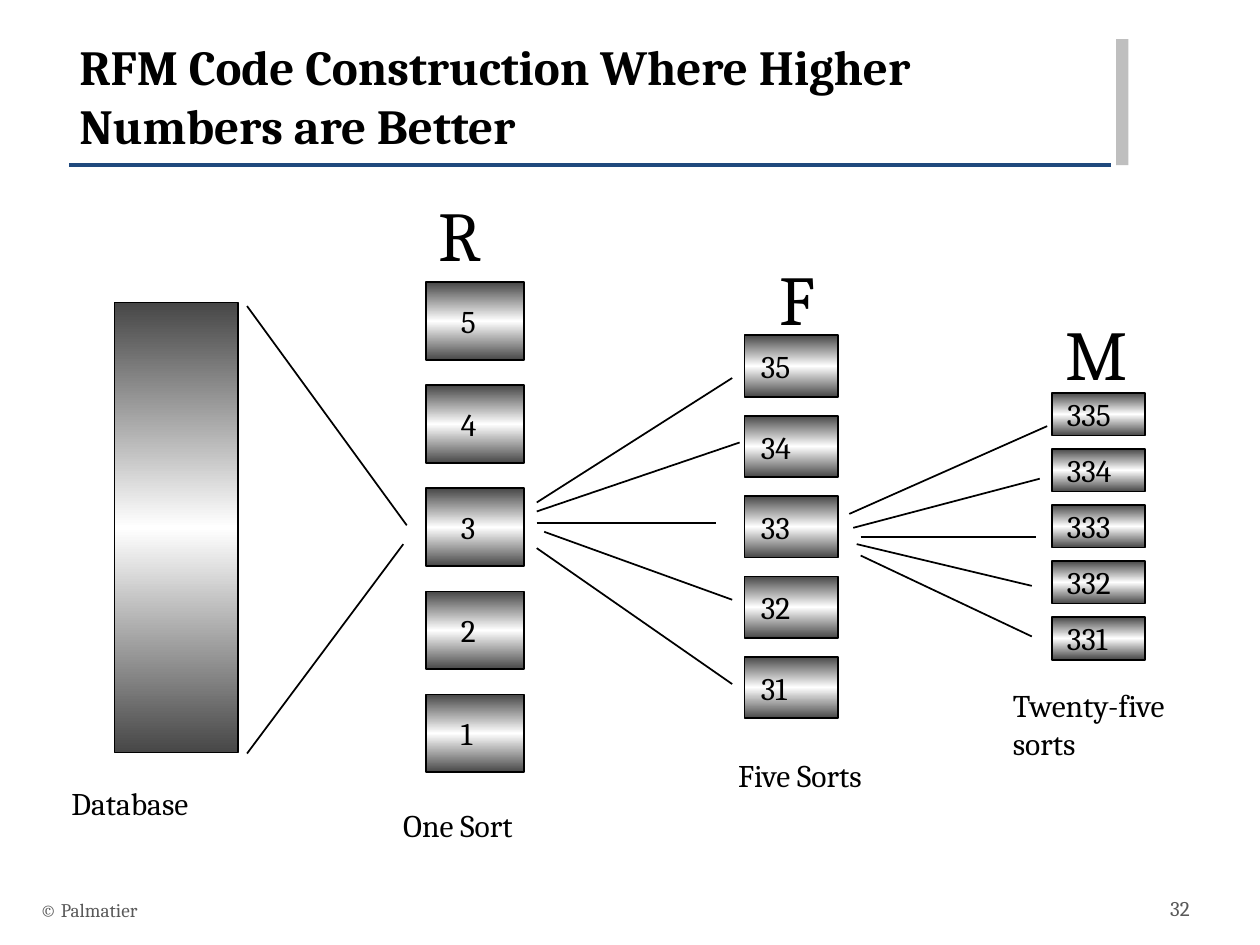
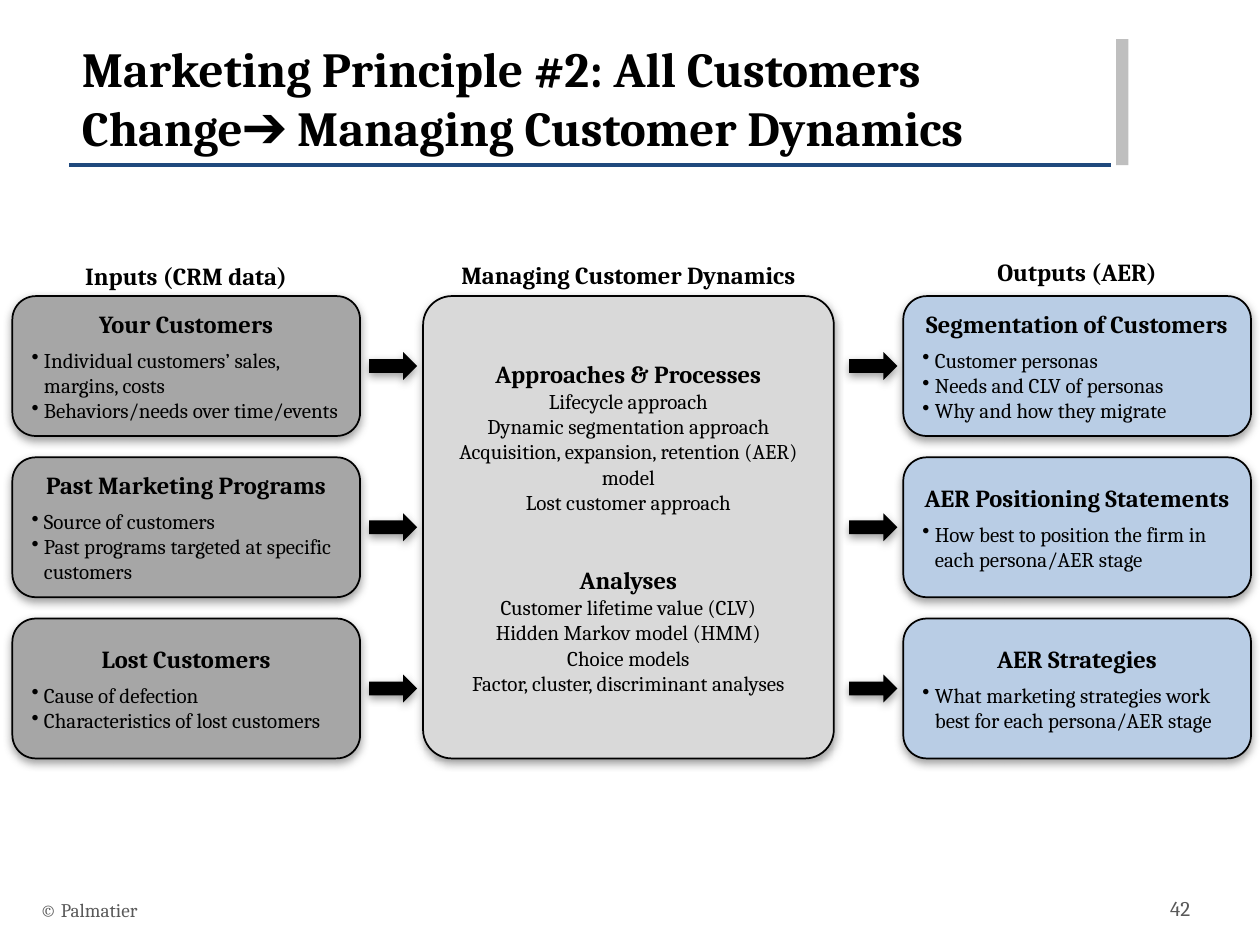
from copy import deepcopy
from dataclasses import dataclass
from typing import NamedTuple

from pptx import Presentation
from pptx.dml.color import RGBColor as Rgb
from pptx.enum.shapes import MSO_CONNECTOR as Connector, MSO_SHAPE as Preset
from pptx.enum.text import MSO_ANCHOR as Anchor, PP_ALIGN as Align
from pptx.oxml import parse_xml
from pptx.oxml.ns import nsdecls, qn
from pptx.util import Cm, Pt


class Theme:
    font = "Cambria"
    ink = Rgb.from_string("000000")
    muted = Rgb.from_string("595959")
    rule = Rgb.from_string("1F497D")
    band = Rgb.from_string("BFBFBF")
    steel = Rgb.from_string("474747")
    shine = Rgb.from_string("FFFFFF")
    inputs = Rgb.from_string("A6A6A6")
    process = Rgb.from_string("D9D9D9")
    outputs = Rgb.from_string("B9CDE5")
    title, letter, label, heading, body, footer = 28, 40, 18, 14, 12, 11


class Box(NamedTuple):
    """A rectangle in centimetres."""
    left: float
    top: float
    width: float
    height: float

    def lengths(self):
        return [Cm(value) for value in self]


@dataclass
class Line:
    text: str
    size: int
    bold: bool = False
    align: Align = Align.LEFT
    before: int = 0
    bullet: bool = False
    color: Rgb = Theme.ink


@dataclass
class Stage:
    """A column of equal cells; offsets count from its top left or bottom left."""
    box: Box
    cell_height: float
    cells: tuple
    caption: str
    caption_offset: tuple
    caption_width: float
    letter: str = ""
    letter_offset: tuple = (0, 0)
    label_inset: float = 0


@dataclass
class Fan:
    """Lines as x1, y1, x2, y2 from the top left of the box."""
    box: Box
    spokes: list


def apply(target, values):
    for name, value in values.items():
        setattr(target, name, value)


def write(frame, lines, **layout):
    apply(frame, {"word_wrap": True, **layout})
    for index, line in enumerate(lines):
        paragraph = frame.add_paragraph() if index else frame.paragraphs[0]
        if line.bullet:
            properties = paragraph._p.get_or_add_pPr()
            properties.set("marL", str(Cm(0.25)))
            properties.set("indent", str(-Cm(0.25)))
            properties.append(parse_xml(f'<a:buChar {nsdecls("a")} char="•"/>'))
        paragraph.alignment = line.align
        if line.before:
            paragraph.space_before = Pt(line.before)
        run = paragraph.add_run()
        run.text = line.text
        apply(run.font, {"name": Theme.font, "size": Pt(line.size), "bold": line.bold})
        run.font.color.rgb = line.color


def add_text(slide, box, line, **layout):
    write(slide.shapes.add_textbox(*box.lengths()).text_frame, [line], **layout)


def add_line(slide, start, end, color=Theme.ink, width=1):
    ends = [Cm(value) for value in (*start, *end)]
    connector = slide.shapes.add_connector(Connector.STRAIGHT, *ends)
    connector.line.color.rgb = color
    connector.line.width = Pt(width)
    connector._element.spPr.append(parse_xml(f'<a:effectLst {nsdecls("a")}/>'))


def add_block(slide, preset, box, fill=None, outlined=True, shadow=False):
    block = slide.shapes.add_shape(preset, *box.lengths())
    block.shadow.inherit = False
    if fill is not None:
        block.fill.solid()
        block.fill.fore_color.rgb = fill
    if outlined:
        block.line.color.rgb = Theme.ink
        block.line.width = Pt(1)
    else:
        block.line.fill.background()
    if shadow:
        block._element.spPr.find(qn("a:effectLst")).append(parse_xml(
            f'<a:outerShdw {nsdecls("a")} blurRad="{Pt(5)}" dist="{Pt(2)}" dir="5400000" '
            'rotWithShape="0"><a:srgbClr val="808080"><a:alpha val="75000"/>'
            '</a:srgbClr></a:outerShdw>'))
    return block


def fill_metal(block):
    """Dark at the top and bottom edges, bright in the middle."""
    block.fill.gradient()
    block.fill.gradient_angle = 270
    stops = block._element.spPr.find(qn("a:gradFill")).find(qn("a:gsLst"))
    stops.append(deepcopy(stops[0]))
    colors = (Theme.steel, Theme.shine, Theme.steel)
    for index, (stop, color) in enumerate(zip(block.fill.gradient_stops, colors)):
        stop.position = index / 2
        stop.color.rgb = color


def add_framed_slide(deck, title, page, title_box):
    slide = deck.slides.add_slide(deck.slide_layouts[6])
    add_line(slide, (1.4, 3.33), (22.4, 3.33), Theme.rule, 2)
    add_block(slide, Preset.RECTANGLE, Box(22.5, 0.79, 0.25, 2.54), Theme.band, outlined=False)
    add_text(slide, title_box, Line(title, Theme.title, bold=True))
    add_text(slide, Box(0.56, 17.83, 17.02, 1.02),
             Line("© Palmatier", Theme.footer, color=Theme.muted),
             vertical_anchor=Anchor.MIDDLE)
    add_text(slide, Box(23.34, 17.93, 1.55, 1.02),
             Line(page, Theme.body, color=Theme.muted))
    return slide


def add_stage(slide, stage):
    left, top, width, height = stage.box
    step = (height - stage.cell_height) / max(len(stage.cells) - 1, 1)
    for row, label in enumerate(stage.cells):
        cell_box = Box(left, top + row * step, width, stage.cell_height)
        cell = add_block(slide, Preset.RECTANGLE, cell_box)
        fill_metal(cell)
        if label:
            write(cell.text_frame, [Line(label, Theme.label)],
                  vertical_anchor=Anchor.MIDDLE, margin_left=Cm(stage.label_inset),
                  margin_right=0, margin_top=0, margin_bottom=0)
    if stage.letter:
        dx, dy = stage.letter_offset
        add_text(slide, Box(left + dx, top + dy, 2.64, 1.96), Line(stage.letter, Theme.letter))
    dx, dy = stage.caption_offset
    add_text(slide, Box(left + dx, top + height + dy, stage.caption_width, 1.27),
             Line(stage.caption, Theme.label))


def add_fan(slide, fan):
    left, top = fan.box[:2]
    for x1, y1, x2, y2 in fan.spokes:
        add_line(slide, (left + x1, top + y1), (left + x2, top + y2))


def build_rfm_slide(deck):
    slide = add_framed_slide(deck, "RFM Code Construction Where Higher Numbers are Better",
                             "32", Box(1.35, 0.61, 20.78, 2.24))
    scores = "54321"
    stages = [
        Stage(Box(2.31, 6.1, 2.49, 9.07), 9.07, ("",), "Database", (-1.12, 0.51), 4.78),
        Stage(Box(8.59, 5.69, 1.98, 9.88), 1.57, tuple(scores), "One Sort",
              (-0.71, 0.56), 4.83, "R", (0, -1.96), 0.7),
        Stage(Box(15.01, 6.76, 1.88, 7.72), 1.24, tuple("3" + s for s in scores),
              "Five Sorts", (-0.38, 0.64), 3.18, "F", (0.46, -1.73), 0.33),
        Stage(Box(21.21, 7.92, 1.88, 5.38), 0.86, tuple("33" + s for s in scores),
              "Twenty-five sorts", (-1.04, 0.41), 4.19, "M", (0.03, -1.78), 0.3),
    ]
    fans = [
        Fan(Box(4.98, 6.17, 3.22, 9.02), [(0, 0, 3.22, 4.42), (0, 9.02, 3.15, 4.8)]),
        Fan(Box(10.82, 7.62, 4.09, 6.17), [
            (0, 2.51, 3.94, 0), (0, 2.69, 4.09, 1.3), (0, 2.92, 3.61, 2.92),
            (0.15, 3.1, 3.94, 4.47), (0, 3.43, 3.94, 6.17)]),
        Fan(Box(17.12, 8.59, 3.99, 4.24), [
            (0, 1.77, 3.99, 0), (0.08, 2.05, 3.84, 1.06), (0.23, 2.23, 3.76, 2.23),
            (0.15, 2.38, 3.68, 3.22), (0.23, 2.61, 3.68, 4.24)]),
    ]
    for stage in stages:
        add_stage(slide, stage)
    for fan in fans:
        add_fan(slide, fan)


CARD_HEIGHT = 2.82


def card_tops(box):
    return [box.top + row * (box.height - CARD_HEIGHT) / 2 for row in range(3)]


def add_column_heading(slide, box, text, rise):
    add_text(slide, Box(box.left, box.top - rise, box.width, 0.86),
             Line(text, Theme.heading, bold=True, align=Align.CENTER))


def add_cards(slide, box, cards, fill):
    for top, (heading, points) in zip(card_tops(box), cards.items()):
        card = add_block(slide, Preset.ROUNDED_RECTANGLE,
                         Box(box.left, top, box.width, CARD_HEIGHT), fill, shadow=True)
        lines = [Line(heading, Theme.heading, bold=True, align=Align.CENTER)]
        lines += [Line(point, Theme.body, bullet=True, before=0 if index else 5)
                  for index, point in enumerate(points)]
        write(card.text_frame, lines, vertical_anchor=Anchor.MIDDLE)


def add_process_panel(slide, box, sections):
    panel = add_block(slide, Preset.ROUNDED_RECTANGLE, box, Theme.process, shadow=True)
    panel.adjustments[0] = 0.07
    lines = []
    for heading, entries in sections.items():
        lines.append(Line(heading, Theme.heading, bold=True, align=Align.CENTER,
                          before=29 if lines else 0))
        lines += [Line(entry, Theme.body, align=Align.CENTER) for entry in entries]
    write(panel.text_frame, lines, vertical_anchor=Anchor.MIDDLE)


def add_flow_arrows(slide, box):
    """One arrow level with the middle of each card row."""
    height = 0.56
    for top in card_tops(box):
        arrow_box = Box(box.left, top + (CARD_HEIGHT - height) / 2, box.width, height)
        add_block(slide, Preset.RIGHT_ARROW, arrow_box, Theme.ink, outlined=False, shadow=True)


def build_dynamics_slide(deck):
    slide = add_framed_slide(
        deck, "Marketing Principle #2: All Customers Change➔ Managing Customer Dynamics",
        "42", Box(1.4, 0.66, 20.78, 2.24))
    top, height = 5.97, 9.32
    inputs = Box(0.25, top, 7.01, height)
    process = Box(8.53, top, 8.28, height)
    outputs = Box(18.21, top, 7.01, height)

    add_column_heading(slide, inputs, "Inputs (CRM data)", 0.84)
    add_column_heading(slide, process, "Managing Customer Dynamics", 0.86)
    add_column_heading(slide, outputs, "Outputs (AER)", 0.92)
    add_cards(slide, inputs, {
        "Your Customers": ["Individual customers’ sales, margins, costs",
                           "Behaviors/needs over time/events"],
        "Past Marketing Programs": ["Source of customers",
                                    "Past programs targeted at specific customers"],
        "Lost Customers": ["Cause of defection", "Characteristics of lost customers"],
    }, Theme.inputs)
    add_process_panel(slide, process, {
        "Approaches & Processes": ["Lifecycle approach", "Dynamic segmentation approach",
                                   "Acquisition, expansion, retention (AER) model",
                                   "Lost customer approach"],
        "Analyses": ["Customer lifetime value (CLV)", "Hidden Markov model (HMM)",
                     "Choice models", "Factor, cluster, discriminant analyses"],
    })
    add_cards(slide, outputs, {
        "Segmentation of Customers": ["Customer personas", "Needs and CLV of personas",
                                      "Why and how they migrate"],
        "AER Positioning Statements": [
            "How best to position the firm in each persona/AER stage"],
        "AER Strategies": ["What marketing strategies work best for each persona/AER stage"],
    }, Theme.outputs)
    for left in (7.44, 17.12):
        add_flow_arrows(slide, Box(left, top, 0.97, height))


def main():
    deck = Presentation()
    apply(deck, {"slide_width": Cm(25.4), "slide_height": Cm(19.05)})
    build_rfm_slide(deck)
    build_dynamics_slide(deck)
    deck.save("out.pptx")


if __name__ == "__main__":
    main()
